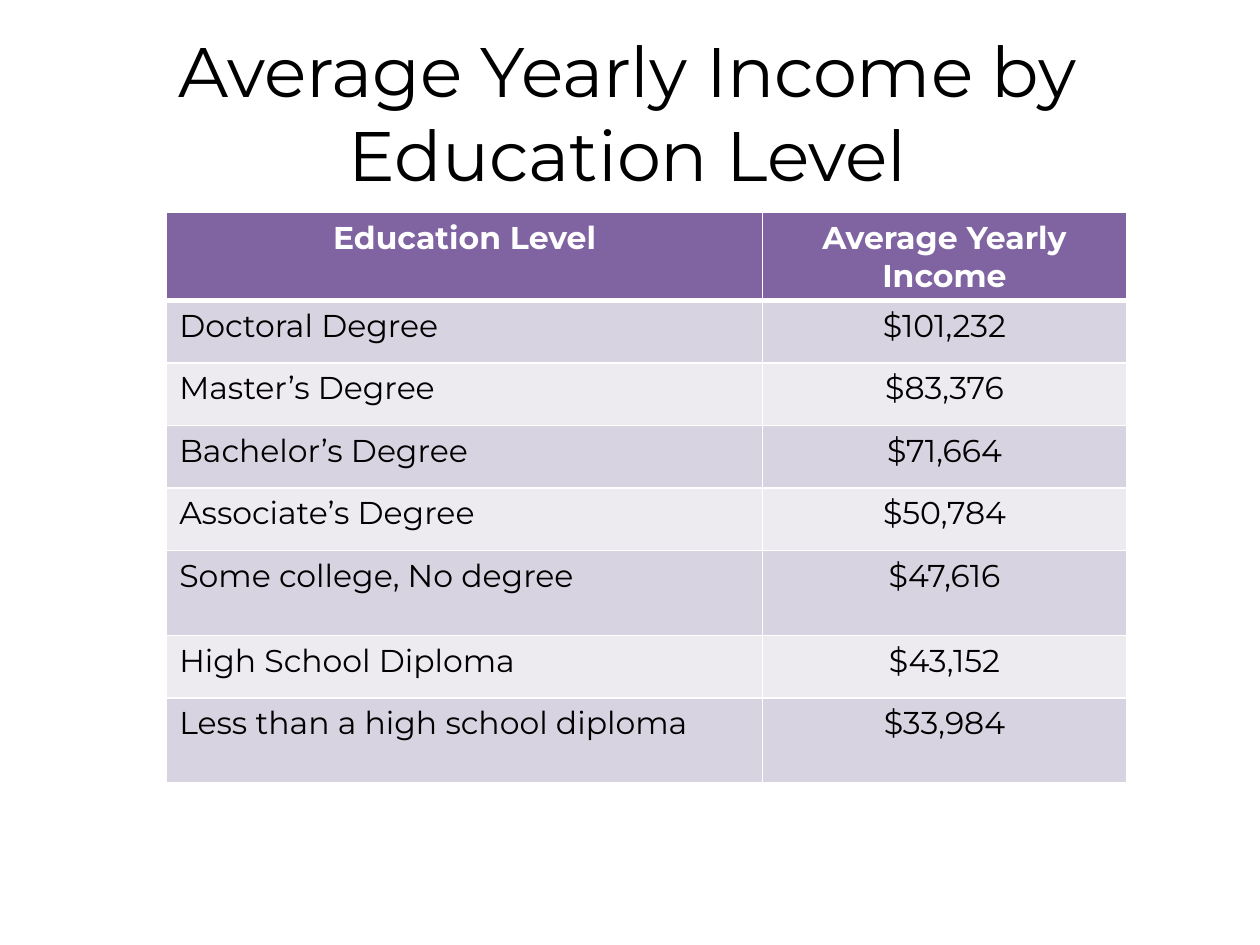
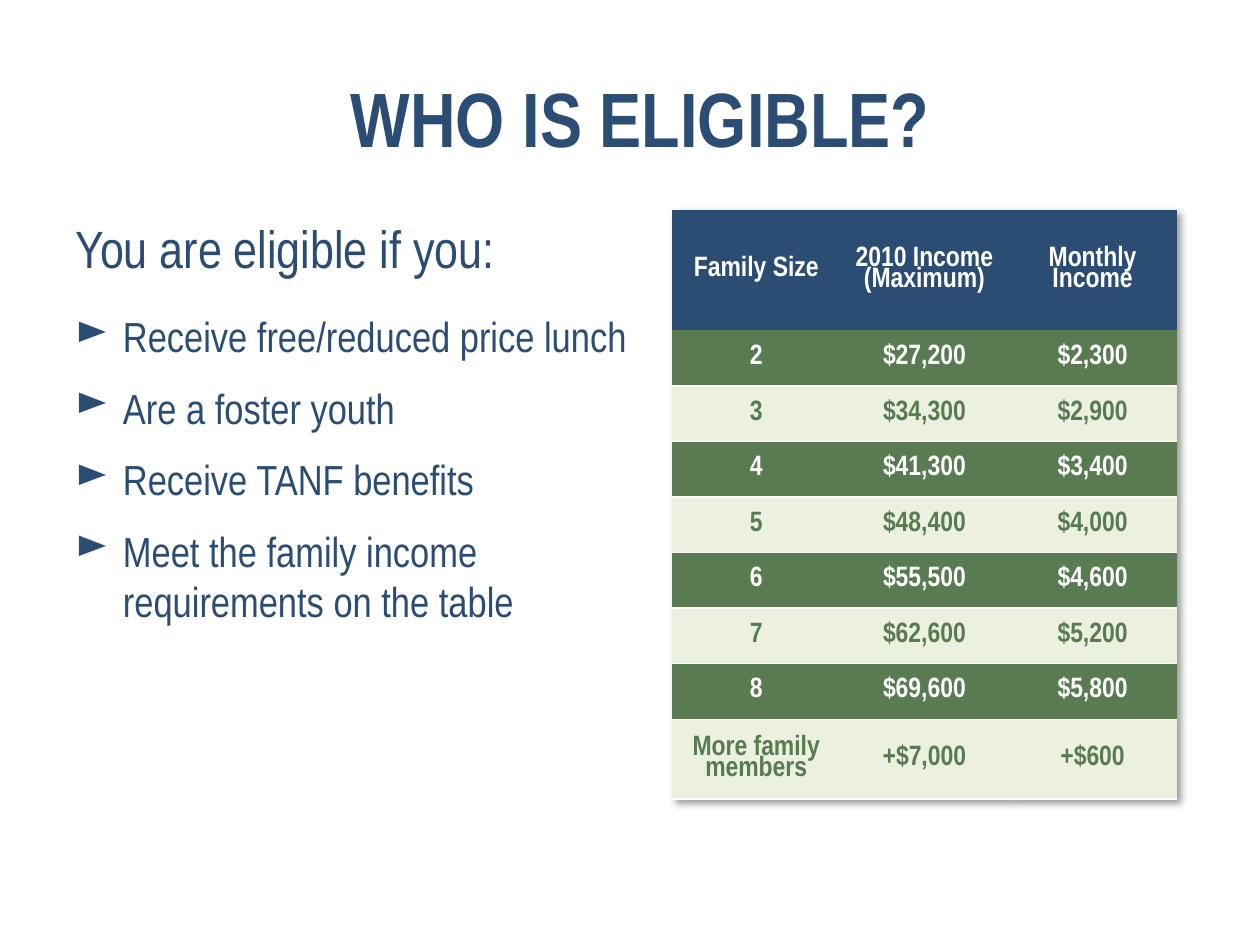
import dataclasses

import pptx
import pptx.dml.color
import pptx.enum.text
import pptx.oxml
import pptx.oxml.ns
import pptx.util
from pptx.util import Cm, Pt

RGBColor = pptx.dml.color.RGBColor
Align = pptx.enum.text.PP_ALIGN
Anchor = pptx.enum.text.MSO_ANCHOR
qn = pptx.oxml.ns.qn

# Colours and fonts
WHITE = RGBColor(0xFF, 0xFF, 0xFF)
BLACK = RGBColor(0x00, 0x00, 0x00)
PURPLE = RGBColor(0x80, 0x64, 0xA2)
LILAC = RGBColor(0xD8, 0xD3, 0xE0)
PALE_LILAC = RGBColor(0xED, 0xEA, 0xF0)
NAVY = RGBColor(0x2B, 0x4C, 0x73)
GREEN = RGBColor(0x59, 0x7B, 0x51)
PALE_GREEN = RGBColor(0xEB, 0xF1, 0xDE)
MONTSERRAT = "Montserrat"
NARROW = "Arial Narrow"
NO_TABLE_STYLE = "{2D5ABB26-0587-4C30-8999-92F81FD0307C}"

# Wording
EDUCATION_INCOME = [
    ("Education Level", "Average Yearly Income"),
    ("Doctoral Degree", "$101,232"),
    ("Master’s Degree", "$83,376"),
    ("Bachelor’s Degree", "$71,664"),
    ("Associate’s Degree", "$50,784"),
    ("Some college, No degree", "$47,616"),
    ("High School Diploma", "$43,152"),
    ("Less than a high school diploma", "$33,984"),
]
FAMILY_LIMITS = [
    ("Family Size", "2010 Income (Maximum)", "Monthly Income"),
    ("2", "$27,200", "$2,300"),
    ("3", "$34,300", "$2,900"),
    ("4", "$41,300", "$3,400"),
    ("5", "$48,400", "$4,000"),
    ("6", "$55,500", "$4,600"),
    ("7", "$62,600", "$5,200"),
    ("8", "$69,600", "$5,800"),
    ("More family members", "+$7,000", "+$600"),
]
CONDITIONS = [
    "Receive free/reduced price lunch",
    "Are a foster youth",
    "Receive TANF benefits",
    "Meet the family income requirements on the table",
]


@dataclasses.dataclass
class TextStyle:
    font: str
    size: int
    color: RGBColor
    bold: bool = False


@dataclasses.dataclass
class RowStyle:
    fill: RGBColor
    text: TextStyle
    borders: dict  # side (L, R, T, B) to width in points


def add_run(paragraph, text, style):
    run = paragraph.add_run()
    run.text = text
    run.font.name = style.font
    run.font.size = Pt(style.size)
    run.font.bold = style.bold
    run.font.color.rgb = style.color


def add_text_frame(slide, left, top, width, height, anchor):
    frame = slide.shapes.add_textbox(left, top, width, height).text_frame
    frame.word_wrap = True
    frame.vertical_anchor = anchor
    return frame


def add_title(slide, text, left, top, width, style):
    frame = add_text_frame(slide, left, top, width, Cm(3.18), Anchor.MIDDLE)
    heading = frame.paragraphs[0]
    heading.alignment = Align.CENTER
    add_run(heading, text, style)


def set_hanging_indent(paragraph, indent, bullet=None):
    properties = paragraph._p.get_or_add_pPr()
    properties.set("marL", str(indent))
    properties.set("indent", str(-indent))
    if bullet:
        mark = pptx.oxml.parse_xml(
            f'<a:buChar {pptx.oxml.ns.nsdecls("a")} char="{bullet}"/>')
        properties.append(mark)


def add_conditions(slide, lead, conditions):
    frame = add_text_frame(slide, Cm(1.27), Cm(4.24), Cm(11.65), Cm(12.57),
                           Anchor.TOP)
    opening = frame.paragraphs[0]
    set_hanging_indent(opening, Cm(0.96))
    opening.space_after = Pt(12)
    add_run(opening, lead, TextStyle(NARROW, 30, NAVY))
    for condition in conditions:
        item = frame.add_paragraph()
        set_hanging_indent(item, Cm(0.96), "►")
        item.space_before = item.space_after = Pt(6)
        add_run(item, condition, TextStyle(NARROW, 24, NAVY))


def set_borders(cell, borders):
    properties = cell._tc.get_or_add_tcPr()
    for side in "LRTB":
        if side in borders:
            properties.append(pptx.oxml.parse_xml(
                f'<a:ln{side} {pptx.oxml.ns.nsdecls("a")} w="{Pt(borders[side])}">'
                f'<a:solidFill><a:srgbClr val="{WHITE}"/></a:solidFill>'
                f'</a:ln{side}>'))


def add_income_table(slide, rows, left, top, widths, heights, header, bands,
                     alignments, anchor=Anchor.TOP, line_spacing=1.0):
    """Draw a header row over rows that alternate between two band styles."""
    frame = slide.shapes.add_table(len(rows), len(widths), left, top,
                                   sum(widths), sum(heights))
    frame.element.find(f".//{qn('a:tableStyleId')}").text = NO_TABLE_STYLE
    table = frame.table
    for column, width in zip(table.columns, widths):
        column.width = width
    for index, (values, height) in enumerate(zip(rows, heights)):
        table.rows[index].height = height
        style = bands[(index - 1) % 2] if index else header
        for position, value in enumerate(values):
            cell = table.cell(index, position)
            set_borders(cell, style.borders)
            cell.fill.solid()
            cell.fill.fore_color.rgb = style.fill
            cell.vertical_anchor = anchor
            entry = cell.text_frame.paragraphs[0]
            entry.alignment = alignments[position] if index else Align.CENTER
            entry.line_spacing = line_spacing
            add_run(entry, value, style.text)
    return frame


def add_table_shadow(frame):
    frame.element.find(f".//{qn('a:tblPr')}").insert(0, pptx.oxml.parse_xml(
        f'<a:effectLst {pptx.oxml.ns.nsdecls("a")}>'
        f'<a:outerShdw blurRad="{Pt(4)}" dist="{Pt(3)}" dir="2700000">'
        f'<a:srgbClr val="{BLACK}"><a:alpha val="40000"/></a:srgbClr>'
        '</a:outerShdw></a:effectLst>'))


def build_education_slide(slide):
    add_title(slide, "Average Yearly Income by Education Level",
              Cm(1.22), Cm(0.66), Cm(22.86), TextStyle(MONTSERRAT, 40, BLACK))
    grid = {"L": 1, "R": 1, "T": 1, "B": 1}
    body = TextStyle(MONTSERRAT, 18, BLACK)
    header = RowStyle(PURPLE, TextStyle(MONTSERRAT, 18, WHITE, True),
                      {**grid, "B": 3})
    bands = [RowStyle(fill, body, {**grid}) for fill in (LILAC, PALE_LILAC)]
    bands[0].borders = grid
    tall, normal = Cm(1.71), Cm(1.26)
    heights = [tall, *[normal] * 4, tall, normal, tall]
    add_income_table(slide, EDUCATION_INCOME, Cm(3.36), Cm(4.28),
                     [Cm(12.01), Cm(7.34)], heights, header, bands,
                     [Align.LEFT, Align.CENTER])


def build_eligibility_slide(slide):
    add_title(slide, "WHO IS ELIGIBLE?", Cm(1.27), Cm(0.76), Cm(23.29),
              TextStyle(NARROW, 44, NAVY, True))
    add_conditions(slide, "You are eligible if you:", CONDITIONS)
    light = TextStyle(NARROW, 16, WHITE, True)
    dark = TextStyle(NARROW, 16, GREEN, True)
    header = RowStyle(NAVY, light, {})
    bands = [RowStyle(GREEN, light, {"B": 1}),
             RowStyle(PALE_GREEN, dark, {"T": 1, "B": 1})]
    limits = add_income_table(
        slide, FAMILY_LIMITS, Cm(13.55), Cm(4.24), [Cm(3.39)] * 3,
        [Cm(2.42), *[Cm(1.12)] * 7, Cm(1.61)], header, bands,
        [Align.CENTER] * 3, Anchor.MIDDLE, 0.8)
    add_table_shadow(limits)


def main():
    deck = pptx.Presentation()
    deck.slide_width, deck.slide_height = Cm(25.4), Cm(19.05)
    blank = deck.slide_layouts[6]
    for build in (build_education_slide, build_eligibility_slide):
        build(deck.slides.add_slide(blank))
    deck.save("out.pptx")


if __name__ == "__main__":
    main()
